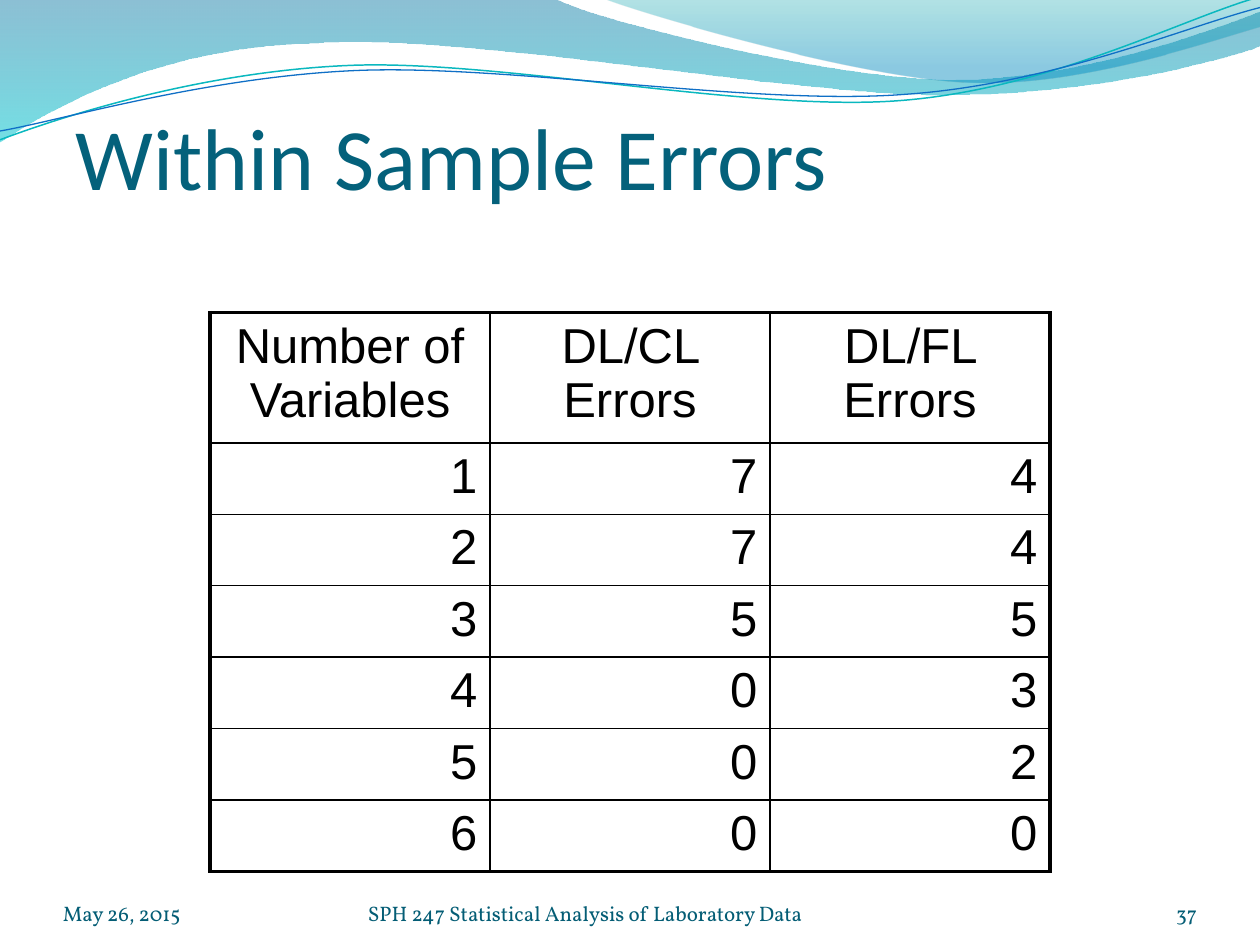
from lxml import etree
from pptx import Presentation
from pptx.dml.color import RGBColor
from pptx.enum.text import MSO_ANCHOR, PP_ALIGN
from pptx.oxml.ns import qn
from pptx.util import Inches, Pt

LEFT, CENTER, RIGHT = PP_ALIGN.LEFT, PP_ALIGN.CENTER, PP_ALIGN.RIGHT
TOP, BOTTOM = MSO_ANCHOR.TOP, MSO_ANCHOR.BOTTOM


def write(frame, text, font, size, color, align=LEFT):
    paragraph = frame.paragraphs[0]
    paragraph.alignment = align
    run = paragraph.add_run()
    run.text = text
    run.font.name = font
    run.font.size = Pt(size)
    run.font.color.rgb = RGBColor.from_string(color)


def add_wave(shapes, start, segments, closed):
    """Draw a run of segments: a pair is a line end, six numbers a Bézier."""
    knots = [(Inches(x), Inches(y)) for x, y in [start] + [s[-2:] for s in segments]]
    builder = shapes.build_freeform(*knots[0])
    builder.add_line_segments(knots[1:], close=closed)
    wave = builder.convert_to_shape()
    wave.shadow.inherit = False
    left, top = (min(axis) for axis in zip(*knots))
    lines = list(wave._element.spPr.iter(qn("a:lnTo")))
    for line, segment in zip(lines, segments):
        if len(segment) == 6:
            curve = etree.Element(qn("a:cubicBezTo"))
            for x, y in zip(segment[::2], segment[1::2]):
                etree.SubElement(curve, qn("a:pt"), x=str(Inches(x) - left),
                                 y=str(Inches(y) - top))
            line.getparent().replace(line, curve)
    return wave


prs = Presentation()
prs.slide_width, prs.slide_height = Inches(10), Inches(7.5)
W, H = prs.slide_width, prs.slide_height
slide = prs.slides.add_slide(prs.slide_layouts[5])
shapes = slide.shapes

# Translucent bands across the top: start, segments, (position, colour, opacity %)
bands = [
    ((0, 0),
     [(4.4, -0.01), (4.76, 0.17, 6.64, 0.63, 7.58, 0.63),
      (8.53, 0.63, 9.58, 0.26, 10, 0.09), (10.01, 0.36),
      (9.83, 0.44, 8.7, 0.76, 7.46, 0.75), (6.22, 0.75, 3.82, 0.28, 2.57, 0.34),
      (1.29, 0.36, 0.46, 0.83, -0.01, 1.13)],
     [(0, "0074A1", 45), (1, "00C6CF", 55)]),
    ((4.79, -0.01),
     [(5.09, 0.11, 6.82, 0.62, 7.69, 0.65), (8.56, 0.69, 9.61, 0.32, 10, 0.21), (10, 0)],
     [(0, "00A1A9", 30), (0.8, "008BBF", 45)]),
]
for start, segments, stops in bands:
    band = add_wave(shapes, start, segments, closed=True)
    band.line.fill.background()
    band.fill.gradient()
    band.fill.gradient_angle = 270
    for stop, (position, color, _) in zip(band.fill.gradient_stops, stops):
        stop.position = position
        stop.color.rgb = RGBColor.from_string(color)
    for tint, (_, _, opacity) in zip(band._element.spPr.iter(qn("a:srgbClr")), stops):
        etree.SubElement(tint, qn("a:alpha"), val=str(opacity * 1000))

# Thin lines that follow the bands
ripples = [
    ((0, 1.11),
     [(0.48, 0.93, 1.58, 0.57, 2.77, 0.52), (3.95, 0.47, 5.93, 0.89, 7.13, 0.8),
      (8.33, 0.71, 9.38, 0.15, 9.98, -0.02)], "0AB8BF", 0.85),
    ((0, 1.04),
     [(0.47, 0.96, 1.64, 0.61, 2.83, 0.56), (4.03, 0.51, 5.97, 0.84, 7.17, 0.75),
      (8.36, 0.67, 9.41, 0.21, 10, 0.06)], "0F6FC6", 0.75),
]
for start, segments, color, width in ripples:
    ripple = add_wave(shapes, start, segments, closed=False)
    ripple.fill.background()
    ripple.line.color.rgb = RGBColor.from_string(color)
    ripple.line.width = Pt(width)

# Footer
footers = [
    (0.5, 2.33, "May 26, 2015", LEFT),
    (2.92, 3.67, "SPH 247 Statistical Analysis of Laboratory Data", LEFT),
    (8.67, 0.83, "37", RIGHT),
]
footer_format = {"word_wrap": True, "vertical_anchor": BOTTOM, "margin_left": 0,
                 "margin_right": 0, "margin_top": 0, "margin_bottom": 0}
for left, width, text, align in footers:
    footer = shapes.add_textbox(Inches(left), Inches(6.95), Inches(width), Inches(0.4)).text_frame
    for key, value in footer_format.items():
        setattr(footer, key, value)
    write(footer, text, "Vollkorn", 12, "045D75", align)

# Error counts
errors = [
    ("Number of Variables", "DL/CL Errors", "DL/FL Errors"),
    (1, 7, 4),
    (2, 7, 4),
    (3, 5, 5),
    (4, 0, 3),
    (5, 0, 2),
    (6, 0, 0),
]
last_row, last_col = len(errors) - 1, len(errors[0]) - 1
table_frame = shapes.add_table(len(errors), len(errors[0]), W // 6, Inches(2.48),
                               W * 2 // 3, Inches(0.44) * len(errors))
table = table_frame.table
table.first_row = table.horz_banding = False
for r, row in enumerate(errors):
    for c, value in enumerate(row):
        cell = table.cell(r, c)
        write(cell.text_frame, str(value), "Arial", 28, "000000", RIGHT if r else CENTER)
        outer_edges = {"a:lnL": c == 0, "a:lnR": c == last_col,
                       "a:lnT": r == 0, "a:lnB": r == last_row}
        for edge, outer in outer_edges.items():
            border = etree.SubElement(cell._tc.get_or_add_tcPr(), qn(edge),
                                      w=str(Pt(2.25 if outer else 1)))
            ink = etree.SubElement(border, qn("a:solidFill"))
            etree.SubElement(ink, qn("a:srgbClr"), val="000000")
        cell.fill.background()
table_frame.height = Inches(4.43)

# Title
title = shapes.title
title.left, title.top, title.width, title.height = W // 20, Inches(0.77), W * 9 // 10, H // 6
title.text_frame.vertical_anchor = TOP
write(title.text_frame, "Within Sample Errors", "Calibri", 50, "04617B")

prs.save("out.pptx")
